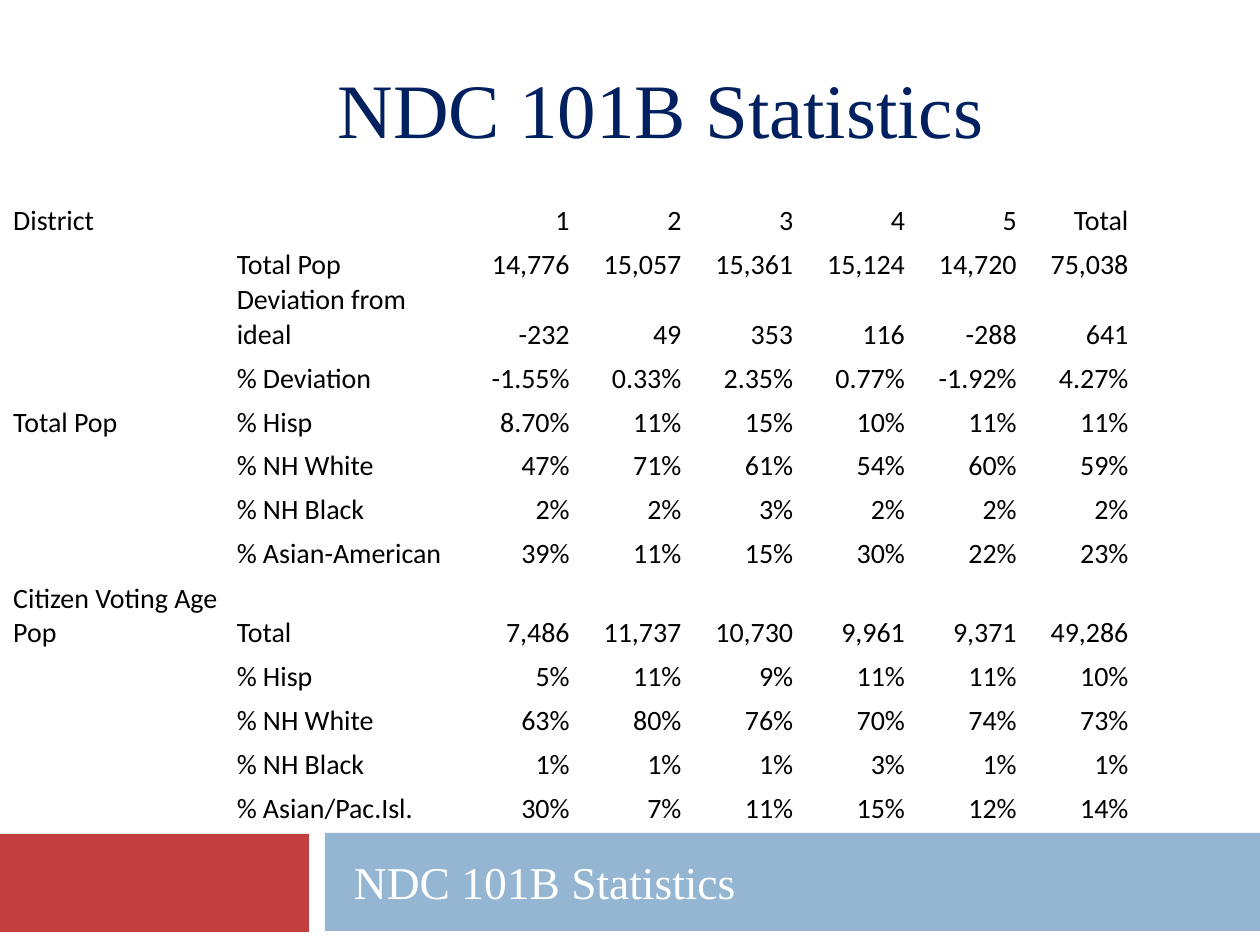
from pptx import Presentation, util as u
from pptx.dml.color import RGBColor
from pptx.enum import shapes, text

TITLE = "NDC 101B Statistics"
ROWS = [
    ("District", "", "1 2 3 4 5 Total"),
    ("", "Total Pop", "14,776 15,057 15,361 15,124 14,720 75,038"),
    ("", "Deviation from ideal", "-232 49 353 116 -288 641"),
    ("", "% Deviation", "-1.55% 0.33% 2.35% 0.77% -1.92% 4.27%"),
    ("Total Pop", "% Hisp", "8.70% 11% 15% 10% 11% 11%"),
    ("", "% NH White", "47% 71% 61% 54% 60% 59%"),
    ("", "% NH Black", "2% 2% 3% 2% 2% 2%"),
    ("", "% Asian-American", "39% 11% 15% 30% 22% 23%"),
    ("Citizen Voting Age Pop", "Total", "7,486 11,737 10,730 9,961 9,371 49,286"),
    ("", "% Hisp", "5% 11% 9% 11% 11% 10%"),
    ("", "% NH White", "63% 80% 76% 70% 74% 73%"),
    ("", "% NH Black", "1% 1% 1% 3% 1% 1%"),
    ("", "% Asian/Pac.Isl.", "30% 7% 11% 15% 12% 14%"),
]
GROUP_COL, MEASURE_COL, VALUE_COL, COLS = 0, 2, 4, 10
MERGES = [(r, MEASURE_COL) for r in (2, 3, 5, 6, 7, 10, 11, 12)] + [(8, GROUP_COL)]
ROW_H, TALL_ROWS = 44, {2: 67, 8: 79}
TABLE_BOX = (12, 194, 1118, 630)
BANDS = [("red", (-1, 834, 310, 98)), ("blue", (325, 833, 935, 98))]

THEME = {
    "red": "C13F3F",
    "blue": "94B6D2",
    "title": {"name": "Times New Roman", "size": 44, "color": "002060"},
    "subtitle": {"name": "Times New Roman", "size": 26, "color": "FFFFFF"},
    "table": {"name": "Calibri", "size": 16, "color": "000000"},
}
PX = 914400 // 126
LEFT, RIGHT = text.PP_ALIGN.LEFT, text.PP_ALIGN.RIGHT
TOP_LEVEL = 2


def px(*values):
    return [u.Emu(v * PX) for v in values]


def apply(obj, values):
    for name, value in values.items():
        setattr(obj, name, value)


def style(font, look):
    apply(font, {"name": look["name"], "size": u.Pt(look["size"]), "bold": False})
    font.color.rgb = RGBColor.from_string(look["color"])


def add_band(s, color, box):
    sp = s.shapes.add_shape(shapes.MSO_SHAPE.RECTANGLE, *px(*box))
    sp.shadow.inherit = False
    sp.fill.solid()
    sp.fill.fore_color.rgb = RGBColor.from_string(THEME[color])
    sp.line.fill.background()
    s.shapes._spTree.insert(TOP_LEVEL, sp._element)


def fill_placeholder(sp, box, look, anchor):
    apply(sp, dict(zip(("left", "top", "width", "height"), px(*box))))
    tf = sp.text_frame
    apply(tf, {"text": TITLE, "word_wrap": True, "vertical_anchor": anchor,
               "auto_size": text.MSO_AUTO_SIZE.NONE})
    p = tf.paragraphs[0]
    apply(p, {"alignment": LEFT, "space_before": u.Pt(0)})
    style(p.runs[0].font, THEME[look])
    return p


def fill_cell(cell, content, align):
    apply(cell, {"text": content, "vertical_anchor": text.MSO_ANCHOR.BOTTOM,
                 "margin_left": u.Inches(0.01), "margin_right": u.Inches(0.01),
                 "margin_top": u.Inches(0.01), "margin_bottom": 0})
    cell.fill.background()
    p = cell.text_frame.paragraphs[0]
    p.alignment = align
    style(p.font, THEME["table"])
    for r in p.runs:
        style(r.font, THEME["table"])


def add_statistics(s):
    table = s.shapes.add_table(len(ROWS), COLS, *px(*TABLE_BOX)).table
    apply(table, {"first_row": False, "horz_banding": False})
    for col in table.columns:
        col.width = u.Emu(TABLE_BOX[2] * PX // COLS)
    for i, (group, measure, values) in enumerate(ROWS):
        table.rows[i].height = px(TALL_ROWS.get(i, ROW_H))[0]
        line = [group, "", measure, "", *values.split()]
        for j, content in enumerate(line):
            fill_cell(table.cell(i, j), content, RIGHT if j >= VALUE_COL else LEFT)
    for i, j in MERGES:
        table.cell(i, j).merge(table.cell(i, j + 1))


def main():
    prs = Presentation()
    apply(prs, {"slide_width": u.Inches(10), "slide_height": u.Inches(7.5)})
    s = prs.slides.add_slide(prs.slide_layouts[0])
    for color, box in BANDS:
        add_band(s, color, box)
    fill_placeholder(s.shapes.title, (325, 16, 892, 144), "title", text.MSO_ANCHOR.BOTTOM)
    p = fill_placeholder(s.placeholders[1], (325, 834, 924, 95), "subtitle",
                         text.MSO_ANCHOR.MIDDLE)
    pPr = p._p.get_or_add_pPr()
    pPr.set("marL", str(u.Inches(0.5)))
    pPr.set("indent", str(u.Inches(-0.37)))
    add_statistics(s)
    prs.save("out.pptx")


if __name__ == "__main__":
    main()
